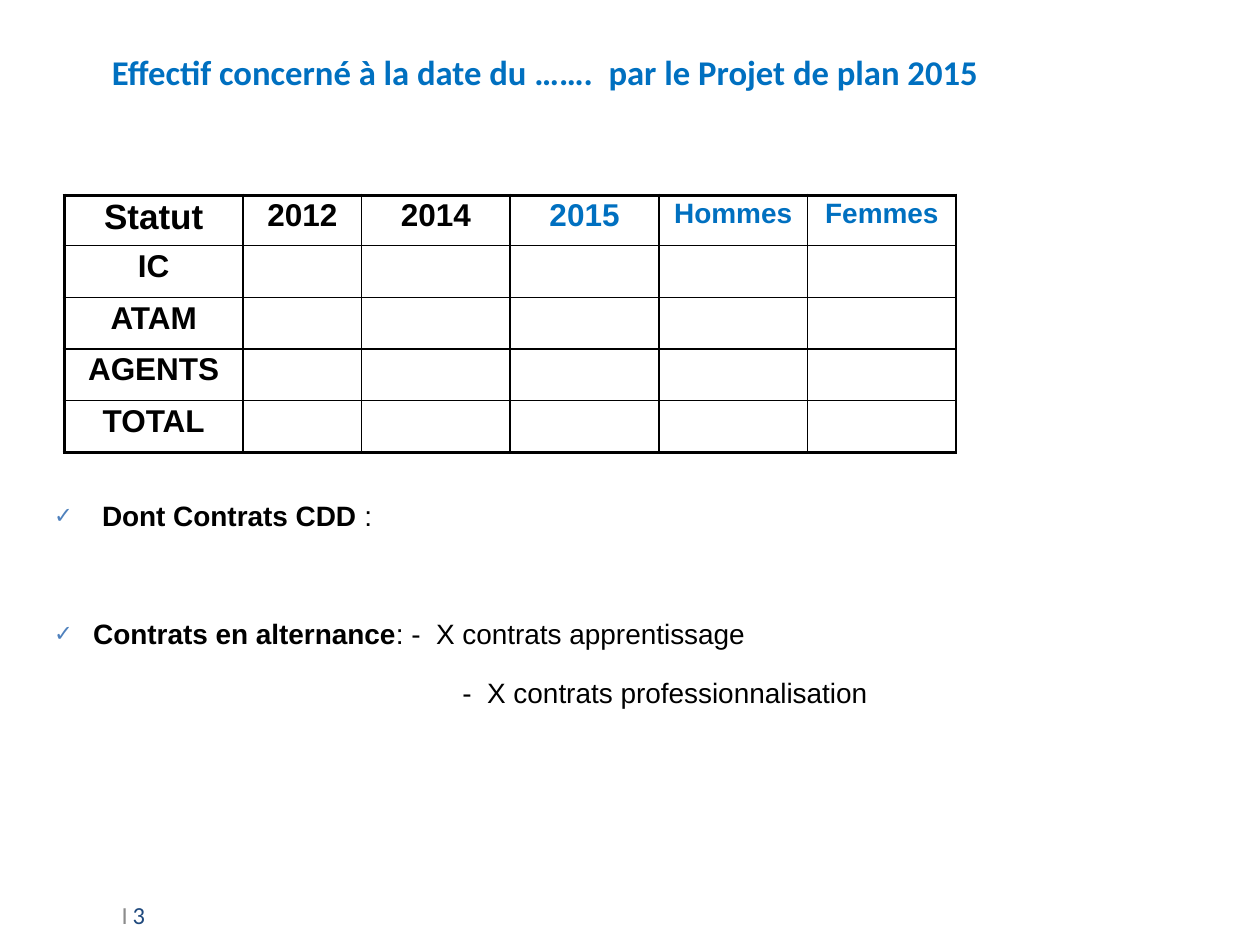
from lxml.etree import SubElement
from pptx import Presentation
from pptx.dml.color import RGBColor
from pptx.enum.text import MSO_ANCHOR, PP_ALIGN
from pptx.oxml.ns import qn
from pptx.util import Inches, Pt

BLACK, BLUE, NAVY, GREY, CHECK = "000000", "0070C0", "1F497D", "8C8C8C", "4F81BD"
HEADERS = [("Statut", 20, BLACK), ("2012", 18, BLACK), ("2014", 18, BLACK),
           ("2015", 18, BLUE), ("Hommes", 16, BLUE), ("Femmes", 16, BLUE)]
STATUSES = ["IC", "ATAM", "AGENTS", "TOTAL"]
COL_WIDTHS = [1.42, 0.94] + [1.18] * 4
ROW_HEIGHTS = [0.38] + [0.41] * 4


def rgb(value):
    return RGBColor.from_string(value)


def add_run(p, text, font="Arial", size=16, color=BLACK, bold=False):
    r = p.add_run()
    r.text = text
    r.font.name = font
    r.font.size = Pt(size)
    r.font.bold = bold
    r.font.color.rgb = rgb(color)


def add_border(cell, side, width):
    ln = SubElement(cell._tc.get_or_add_tcPr(), qn(f"a:ln{side}"), w=str(Pt(width)))
    fill = SubElement(ln, qn("a:solidFill"))
    SubElement(fill, qn("a:srgbClr"), val=BLACK)


def add_check(p):
    pPr = p._p.get_or_add_pPr()
    SubElement(SubElement(pPr, qn("a:buClr")), qn("a:srgbClr"), val=CHECK)
    SubElement(pPr, qn("a:buSzPct"), val="80000")
    SubElement(pPr, qn("a:buFont"), typeface="Arial")
    SubElement(pPr, qn("a:buChar"), char="✓")


class Deck:
    heading_font = "Calibri"
    line_spacing = 0.9

    def __init__(self):
        self.prs = Presentation()
        self.prs.slide_width, self.prs.slide_height = Inches(10), Inches(7.5)
        self.s = self.prs.slides.add_slide(self.prs.slide_layouts[6])

    def text_box(self, left, top, width, height, anchor=MSO_ANCHOR.MIDDLE):
        sp = self.s.shapes.add_textbox(*map(Inches, (left, top, width, height)))
        tf = sp.text_frame
        tf.word_wrap = True
        tf.vertical_anchor = anchor
        return tf

    def title(self, text):
        p = self.text_box(0.58, 0.38, 7.49, 0.37).paragraphs[0]
        p.alignment = PP_ALIGN.CENTER
        add_run(p, text, font=self.heading_font, size=19.8, color=BLUE, bold=True)

    def page_number(self, number):
        p = self.text_box(0.83, 7, 1, 0.52).paragraphs[0]
        for text, size, color in [(" ", 12, GREY), ("I", 14, GREY),
                                  (" ", 12, GREY), (number, 14, NAVY)]:
            add_run(p, text, font=self.heading_font, size=size, color=color)

    def table(self, left, top, headers, labels):
        rows, cols = len(labels) + 1, len(headers)
        frame = self.s.shapes.add_table(rows, cols, Inches(left), Inches(top),
                                        Inches(sum(COL_WIDTHS)), Inches(sum(ROW_HEIGHTS)))
        table = frame.table
        table.first_row = table.horz_banding = False
        for col, width in zip(table.columns, COL_WIDTHS):
            col.width = Inches(width)
        for row, height in zip(table.rows, ROW_HEIGHTS):
            row.height = Inches(height)
        for i in range(rows):
            for j in range(cols):
                cell = table.cell(i, j)
                add_border(cell, "L", 2.25 if j == 0 else 1)
                add_border(cell, "R", 1)
                add_border(cell, "T", 2.25 if i == 0 else 1)
                add_border(cell, "B", 2.25 if i == rows - 1 else 1)
                cell.fill.background()
        for j, (text, size, color) in enumerate(headers):
            self.cell_text(table.cell(0, j), text, size, color)
        for i, text in enumerate(labels, 1):
            self.cell_text(table.cell(i, 0), text, 18, BLACK)

    def cell_text(self, cell, text, size, color):
        p = cell.text_frame.paragraphs[0]
        p.alignment = PP_ALIGN.CENTER
        p.line_spacing = self.line_spacing
        add_run(p, text, size=size, color=color, bold=True)

    def contracts(self, items):
        tf = self.text_box(0.43, 3.99, 6.85, 1.75, MSO_ANCHOR.TOP)
        tf.margin_left = tf.margin_right = tf.margin_top = tf.margin_bottom = 0
        for i, (label, text, indent, before) in enumerate(items):
            p = tf.add_paragraph() if i else tf.paragraphs[0]
            p.line_spacing = self.line_spacing
            p.space_before = Pt(before)
            pPr = p._p.get_or_add_pPr()
            pPr.set("marL", str(Inches(indent)))
            if label:
                pPr.set("indent", str(-Inches(indent)))
                add_check(p)
                add_run(p, label, bold=True)
            add_run(p, text)


def main():
    deck = Deck()
    deck.page_number("3")
    deck.title("Effectif concerné à la date du …….  par le Projet de plan 2015")
    deck.table(0.51, 1.55, HEADERS, STATUSES)
    deck.contracts([
        ("Dont Contrats CDD ", ":", 0.38, 0),
        ("Contrats en alternance", ": -  X contrats apprentissage", 0.31, 49.8),
        (None, "-  X contrats professionnalisation", 3.24, 16.6),
    ])
    deck.prs.save("out.pptx")


if __name__ == "__main__":
    main()
